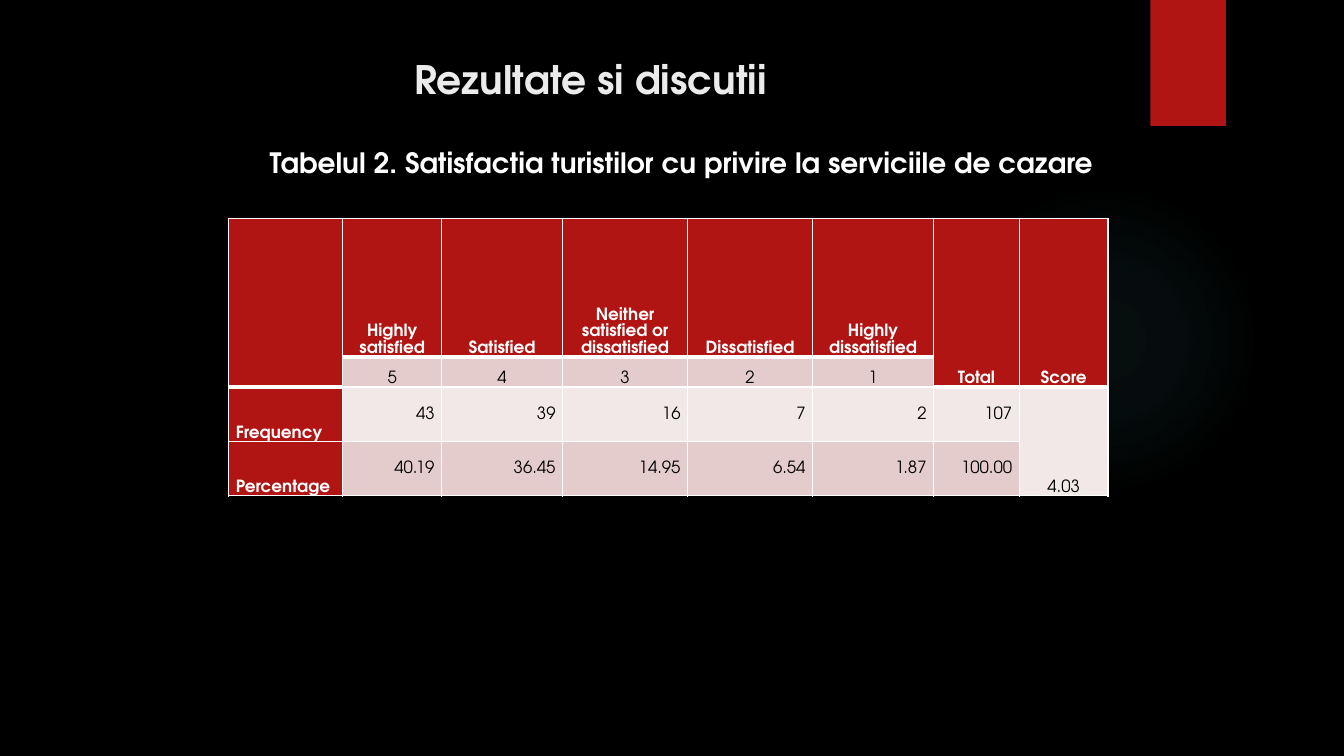
from lxml import etree
from pptx import Presentation
from pptx.dml.color import RGBColor
from pptx.enum.shapes import MSO_SHAPE
from pptx.enum.text import MSO_ANCHOR, PP_ALIGN
from pptx.oxml import parse_xml
from pptx.oxml.ns import qn
from pptx.util import Inches, Pt

LEFT, CENTER, RIGHT = PP_ALIGN.LEFT, PP_ALIGN.CENTER, PP_ALIGN.RIGHT
TOP, MIDDLE, BOTTOM = MSO_ANCHOR.TOP, MSO_ANCHOR.MIDDLE, MSO_ANCHOR.BOTTOM
RECTANGLE, OVAL = MSO_SHAPE.RECTANGLE, MSO_SHAPE.OVAL
NAMESPACE = "http://schemas.openxmlformats.org/drawingml/2006/main"

RED, WHITE, BLACK = "B01513", "FFFFFF", "000000"
PINK, PALE = "E4CCCC", "F2E8E7"


def color(value):
    return RGBColor.from_string(value)


class SlideBuilder:
    font = "TeX Gyre Adventor"

    def __init__(self, slide, background):
        self.slide = slide
        slide.background.fill.solid()
        slide.background.fill.fore_color.rgb = color(background)

    def add_text(self, paragraph, text, size, ink, bold, align):
        paragraph.alignment = align
        run = paragraph.add_run()
        run.text = text
        run.font.name = self.font
        run.font.size = Pt(size)
        run.font.bold = bold
        run.font.color.rgb = color(ink)

    def heading(self, text, box, size, ink):
        frame = self.slide.shapes.add_textbox(*map(Inches, box)).text_frame
        frame.word_wrap = True
        frame.vertical_anchor = TOP
        self.add_text(frame.paragraphs[0], text, size, ink, True, CENTER)

    def shape(self, preset, box, fill):
        shape = self.slide.shapes.add_shape(preset, *map(Inches, box))
        shape.shadow.inherit = False
        shape.line.fill.background()
        shape.fill.solid()
        shape.fill.fore_color.rgb = color(fill)
        return shape

    def glow(self, box, tint, stops):
        """Circle that fades out; stops are (position %, opacity %)."""
        properties = self.shape(OVAL, box, tint)._element.spPr
        marks = "".join(
            f'<a:gs pos="{position * 1000}"><a:srgbClr val="{tint}">'
            f'<a:alpha val="{opacity * 1000}"/></a:srgbClr></a:gs>'
            for position, opacity in stops)
        gradient = parse_xml(
            f'<a:gradFill xmlns:a="{NAMESPACE}" rotWithShape="1"><a:gsLst>{marks}</a:gsLst>'
            '<a:path path="circle"><a:fillToRect l="50000" t="50000" r="50000" b="50000"/>'
            '</a:path></a:gradFill>')
        properties.replace(properties.find(qn("a:solidFill")), gradient)

    def table(self, box, widths, heights):
        frame = self.slide.shapes.add_table(len(heights), len(widths), *map(Inches, box))
        table = frame.table
        for column, width in zip(table.columns, widths):
            column.width = Inches(width)
        for row, height in zip(table.rows, heights):
            row.height = Inches(height)
        return table

    def cell(self, cell, text, fill, ink, bold, align, anchor, borders):
        cell.margin_left = cell.margin_right = Inches(0.07)
        cell.margin_top = cell.margin_bottom = 0
        cell.vertical_anchor = anchor
        cell.fill.solid()
        cell.fill.fore_color.rgb = color(fill)
        paragraph = cell.text_frame.paragraphs[0]
        paragraph.line_spacing = 1.07
        self.add_text(paragraph, text, 12, ink, bold, align)
        properties = cell._tc.get_or_add_tcPr()
        for index, (side, weight) in enumerate(borders.items()):
            line = etree.Element(qn(f"a:ln{side}"), w=str(Pt(weight)))
            ink_fill = etree.SubElement(line, qn("a:solidFill"))
            etree.SubElement(ink_fill, qn("a:srgbClr"), val=WHITE)
            properties.insert(index, line)


def satisfaction_table(builder):
    rows = [
        ["", "Highly satisfied", "Satisfied", "Neither satisfied or dissatisfied",
         "Dissatisfied", "Highly dissatisfied", "Total", "Score"],
        ["", "5", "4", "3", "2", "1", "", ""],
        ["Frequency", "43", "39", "16", "7", "2", "107", "4.03"],
        ["Percentage", "40.19", "36.45", "14.95", "6.54", "1.87", "100.00", ""],
    ]
    table = builder.table((2.27, 2.17, 8.72, 2.71),
                          [1.13, 0.98, 1.2, 1.24, 1.24, 1.2, 0.85, 0.88],
                          [1.37, 0.27, 0.54, 0.54])
    label, total, score = 0, 6, 7
    for r, row in enumerate(rows):
        for c, text in enumerate(row):
            # Label, total and score headers are two rows deep
            header_depth = 2 if c in (label, total, score) else 1
            header = r < header_depth or c == label
            figure = r >= 2 and label < c < score
            if header:
                fill = RED
            else:
                fill = PALE if r == 2 or c == score else PINK
            if figure:
                align = RIGHT
            else:
                align = LEFT if c == label else CENTER
            borders = {"L": 1, "R": 1,
                       "T": 3 if r == header_depth else 1,
                       "B": 3 if r + 1 == header_depth else 1}
            builder.cell(table.cell(r, c), text, fill, WHITE if header else BLACK,
                         header, align, MIDDLE if figure else BOTTOM, borders)
    for top, column in ((0, label), (0, total), (0, score), (2, score)):
        table.cell(top, column).merge(table.cell(top + 1, column))


def main():
    deck = Presentation()
    deck.slide_width, deck.slide_height = Inches(13.33), Inches(7.5)
    builder = SlideBuilder(deck.slides.add_slide(deck.slide_layouts[6]), BLACK)

    # Backdrop
    builder.glow((9.41, 1.83, 3.08, 3.08), "50B9C1", [(0, 7), (36, 6), (69, 0)])
    builder.shape(RECTANGLE, (11.41, 0, 0.75, 1.25), RED)

    # Title and table caption
    builder.heading("Rezultate si discutii", (0.71, 0.5, 10.29, 0.7), 28, "EBEBEB")
    builder.heading("Tabelul 2. Satisfactia turistilor cu privire la serviciile de cazare",
                    (1.08, 1.39, 11.36, 5.53), 20, WHITE)

    # Survey results
    satisfaction_table(builder)
    deck.save("out.pptx")


if __name__ == "__main__":
    main()
